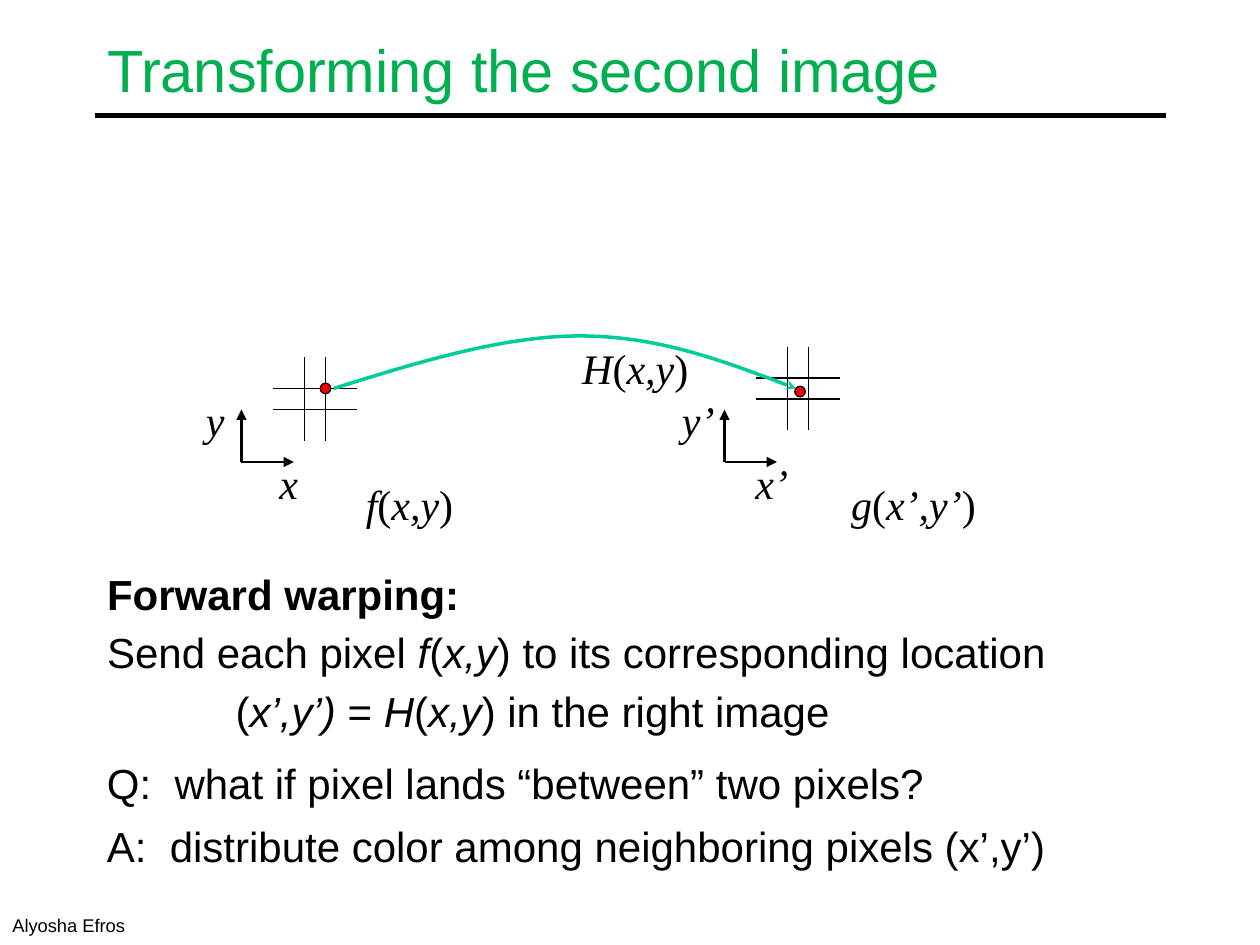
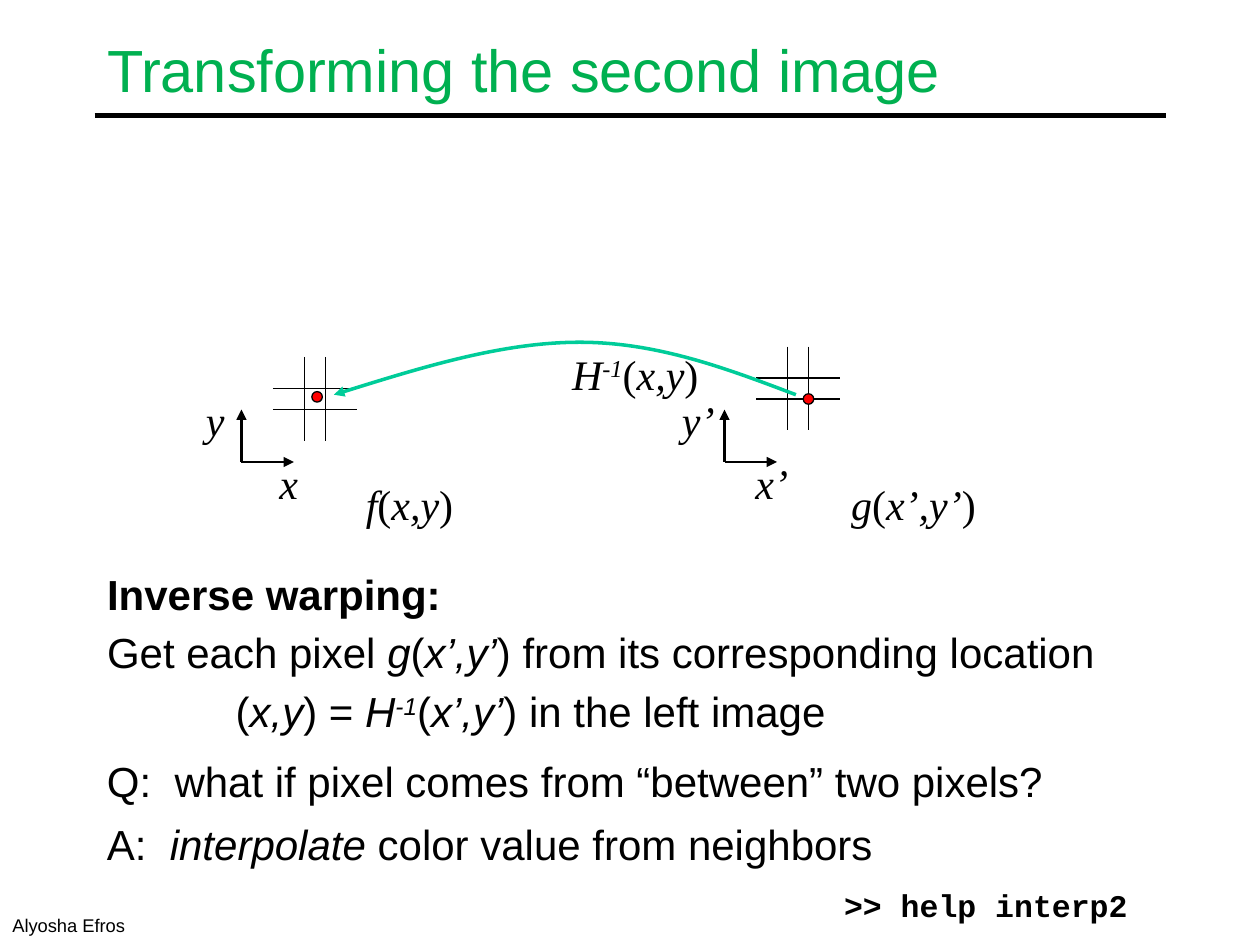
from dataclasses import dataclass

from lxml import etree
from pptx import Presentation
from pptx import util as u
from pptx.dml.color import RGBColor
from pptx.enum import shapes, text
from pptx.oxml.ns import qn

COLUMNS, ROWS = 120, 90


@dataclass(frozen=True)
class Theme:
    ink: RGBColor = RGBColor.from_string("000000")
    heading: RGBColor = RGBColor.from_string("00B050")
    warp: RGBColor = RGBColor.from_string("00CC99")
    pixel: RGBColor = RGBColor.from_string("FF0000")
    sans: str = "Arial"
    math: str = "Times New Roman"
    code: str = "Courier New"
    title_size: float = 34
    body_size: float = 24
    code_size: float = 18
    credit_size: float = 10.5
    hairline: float = 0.75
    stroke: float = 1.5
    curve: float = 2
    rule: float = 3


class Deck:
    def __init__(self, theme):
        self.theme = theme
        self.prs = Presentation()
        self.prs.slide_width, self.prs.slide_height = u.Inches(10), u.Inches(7.5)
        self.slide = None

    def spot(self, column, row):
        """Grid position (or size) in EMU."""
        return (round(column * self.prs.slide_width / COLUMNS),
                round(row * self.prs.slide_height / ROWS))

    def box(self, column, row, columns, rows):
        return *self.spot(column, row), *self.spot(columns, rows)

    def new_slide(self, heading):
        t = self.theme
        self.slide = self.prs.slides.add_slide(self.prs.slide_layouts[1])
        title = self.slide.shapes.title
        self.place(title, (9, 1, 102, 11))
        title.text_frame.vertical_anchor = text.MSO_ANCHOR.MIDDLE
        self.fill_paragraph(title.text_frame.paragraphs[0], heading,
                            size=t.title_size, color=t.heading)
        self.lines([((9, 11), (111, 11))], t.rule)

    def place(self, shape, area):
        shape.left, shape.top, shape.width, shape.height = self.box(*area)
        shape.text_frame.word_wrap = True
        shape.text_frame.auto_size = text.MSO_AUTO_SIZE.NONE

    def fill_paragraph(self, paragraph, marked, font=None, size=None, color=None,
                       bold=False, align=text.PP_ALIGN.LEFT, before=0, indent=(0, 0)):
        """Add runs and spacing; *...* marks italics and ^...^ superscript."""
        t = self.theme
        paragraph.alignment = align
        layout = paragraph._p.get_or_add_pPr()
        layout.set("marL", str(u.Inches(indent[0])))
        layout.set("indent", str(u.Inches(indent[1])))
        spacing = etree.SubElement(layout, qn("a:spcBef"))
        etree.SubElement(spacing, qn("a:spcPct")).set("val", str(before * 1000))
        etree.SubElement(layout, qn("a:buNone"))
        for i, slanted in enumerate(marked.split("*")):
            for j, piece in enumerate(slanted.split("^")):
                if not piece:
                    continue
                run = paragraph.add_run()
                run.text = piece
                run.font.name = font or t.sans
                run.font.size = u.Pt(size or t.body_size)
                run.font.color.rgb = color or t.ink
                run.font.bold = bold
                run.font.italic = i % 2 == 1
                if j % 2:
                    run._r.get_or_add_rPr().set("baseline", "30000")

    def note(self, area, marked, **style):
        frame = self.slide.shapes.add_textbox(*self.box(*area)).text_frame
        frame.word_wrap = True
        self.fill_paragraph(frame.paragraphs[0], marked, **style)

    def formula(self, area, marked):
        self.note(area, marked, font=self.theme.math,
                  align=text.PP_ALIGN.CENTER, before=50)

    def statement(self, area, marked):
        self.note(area, marked, before=20, indent=(0.38, -0.38))

    def body(self, heading, action, equation):
        body = self.slide.placeholders[1]
        self.place(body, (9, 53.5, 102, 18.6))
        frame = body.text_frame
        hanging = (0.38, -0.38)
        self.fill_paragraph(frame.paragraphs[0], heading, bold=True,
                            before=20, indent=hanging)
        self.fill_paragraph(frame.add_paragraph(), action, before=20, indent=hanging)
        self.fill_paragraph(frame.add_paragraph(), equation, before=20, indent=(1.02, 0))

    def arrowhead(self, shape, end, kind):
        etree.SubElement(shape.line._get_or_add_ln(), qn(f"a:{end}End")).set("type", kind)

    def lines(self, segments, width, arrows=False):
        """Draw segments as one group, optionally with arrows at their ends."""
        group = self.slide.shapes.add_group_shape()
        for start, end in segments:
            line = group.shapes.add_connector(
                shapes.MSO_CONNECTOR.STRAIGHT, *self.spot(*start), *self.spot(*end))
            line.line.color.rgb = self.theme.ink
            line.line.width = u.Pt(width)
            if arrows:
                self.arrowhead(line, "tail", "triangle")
            etree.SubElement(line._element.spPr, qn("a:effectLst"))

    def pixel_grid(self, column, row, side=8):
        down = [((column + k, row), (column + k, row + side)) for k in (3, 5)]
        across = [((column, row + k), (column + side, row + k)) for k in (3, 5)]
        self.lines(down + across, self.theme.hairline)

    def axes(self, column, row, x_name, y_name, length=5):
        origin = (column, row)
        self.lines([(origin, (column, row - length)), (origin, (column + length, row))],
                   self.theme.stroke, arrows=True)
        self.formula((column, row - 1, 9, 6), x_name)
        self.formula((column - 7, row - 7, 9, 6), y_name)

    def pixel(self, column, row):
        dot = self.slide.shapes.add_shape(
            shapes.MSO_SHAPE.OVAL, *self.box(column - 0.5, row - 0.5, 1, 1))
        dot.shadow.inherit = False
        dot.fill.solid()
        dot.fill.fore_color.rgb = self.theme.pixel
        dot.line.color.rgb = self.theme.ink
        dot.line.width = u.Pt(self.theme.hairline)

    def warp_curve(self, top, end, kind):
        """Arch between both pixel grids, bent by two cubic segments."""
        start, *controls = [self.spot(column, top + drop) for column, drop in (
            (31.8, 5), (39.8, 2.5), (47.9, 0), (55.2, 0),
            (62.6, 0), (69.2, 2.5), (75.8, 5))]
        builder = self.slide.shapes.build_freeform(*start)
        builder.add_line_segments(controls, close=False)
        arch = builder.convert_to_shape()
        steps = list(arch._element.iter(qn("a:lnTo")))
        for first in range(0, len(steps), 3):
            bend = etree.SubElement(steps[first].getparent(), qn("a:cubicBezTo"))
            for step in steps[first:first + 3]:
                bend.append(step[0])
                step.getparent().remove(step)
        arch.shadow.inherit = False
        arch.fill.background()
        arch.line.color.rgb = self.theme.warp
        arch.line.width = u.Pt(self.theme.curve)
        self.arrowhead(arch, end, kind)

    def warping(self, top, mapping, end, kind, pixels):
        """Left and right images joined by the given mapping."""
        self.new_slide("Transforming the second image")
        self.pixel_grid(26, 34)
        self.pixel_grid(72, 33)
        self.axes(23, 44, "*x*", "*y*")
        self.axes(69, 44, "*x’*", "*y’*")
        self.formula((32, 45, 14, 6), "*f*(*x,y*)")
        self.formula((78, 45, 18, 6), "*g*(*x’,y’*)")
        self.warp_curve(top, end, kind)
        self.formula((53, top, 15, 6), mapping)
        for center in pixels:
            self.pixel(*center)
        self.note((0, 86.5, 32, 3.5), "Alyosha Efros",
                  size=self.theme.credit_size, before=50)

    def questions(self, row, question, answer):
        self.statement((9, row, 105, 7), question)
        self.statement((9, row + 6, 102, 12), answer)


def main():
    theme = Theme()
    deck = Deck(theme)

    deck.warping(32, "*H*(*x,y*)", "tail", "stealth", [(31, 37), (76.2, 37.3)])
    deck.body("Forward warping:",
              "Send each pixel *f*(*x,y*) to its corresponding location",
              "(*x’,y’) *= *H*(*x,y*) in the right image")
    deck.questions(71.6, "Q:  what if pixel lands “between” two pixels?",
                   "A:  distribute color among neighboring pixels (x’,y’)")

    deck.warping(32.6, "*H^-1^*(*x,y*)", "head", "triangle", [(30.2, 37.8), (77, 38)])
    deck.body("Inverse warping:",
              "Get each pixel *g*(*x’,y’*) from its corresponding location",
              "(*x,y*) = *H^-1^*(*x’,y’*) in the left image")
    deck.questions(71.4, "Q:  what if pixel comes from “between” two pixels?",
                   "A:  *interpolate* color value from neighbors")
    deck.note((79.2, 83.8, 40, 4.8), ">> help interp2",
              font=theme.code, size=theme.code_size, bold=True)

    deck.prs.save("out.pptx")


if __name__ == "__main__":
    main()
